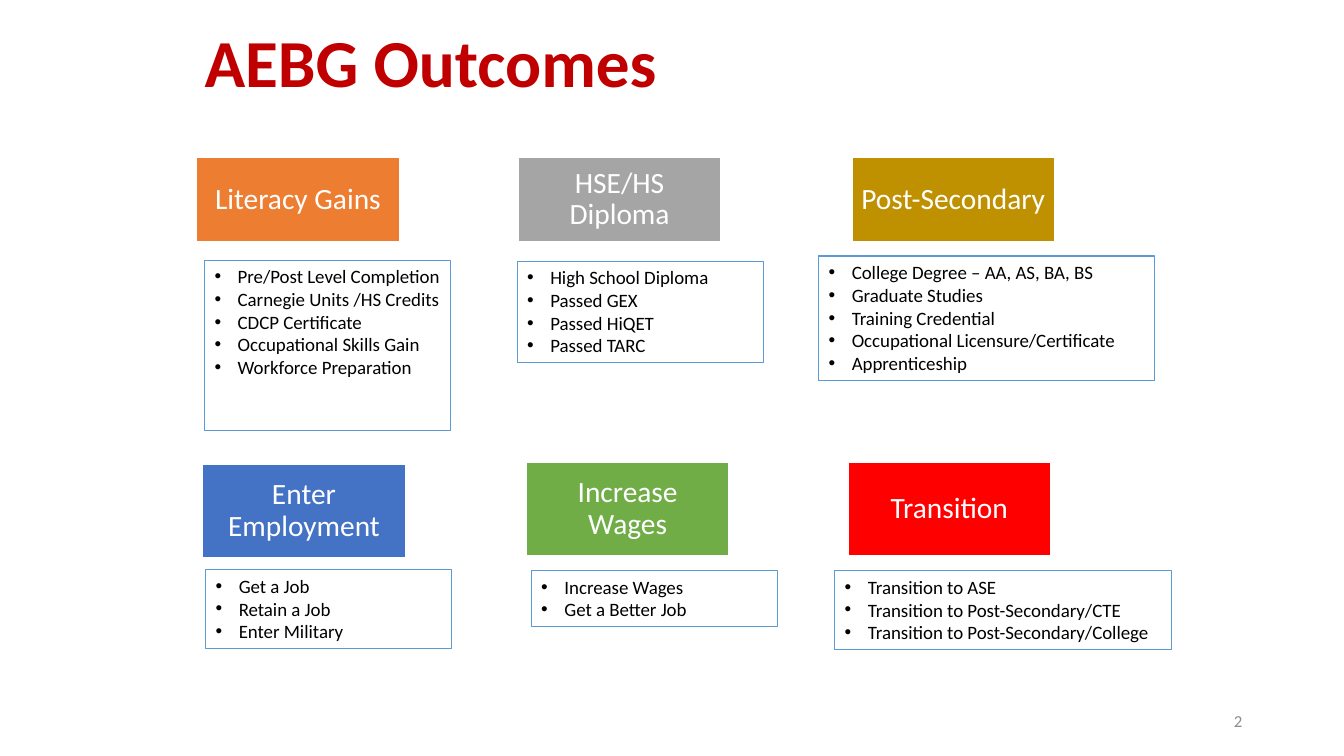
from dataclasses import dataclass

from lxml.etree import SubElement
from pptx import Presentation
from pptx.dml.color import RGBColor
from pptx.enum.shapes import MSO_SHAPE as Preset
from pptx.enum.text import MSO_ANCHOR as Anchor, PP_ALIGN as Align
from pptx.oxml.ns import qn
from pptx.util import Inches, Pt


@dataclass(frozen=True)
class Theme:
    font: str = "Calibri"
    title: str = "C00000"
    white: str = "FFFFFF"
    black: str = "000000"
    muted: str = "8C8C8C"
    border: str = "5B9BD5"
    orange: str = "ED7D31"
    gray: str = "A5A5A5"
    gold: str = "BF9000"
    blue: str = "4472C4"
    green: str = "70AD47"
    red: str = "FF0000"
    title_size: float = 48
    heading_size: float = 21
    list_size: float = 13.5
    number_size: float = 12


theme = Theme()


def write_text(shape, lines, *, size, color, bold=False, align=Align.LEFT,
               anchor=Anchor.TOP, spacing=1.0, inset=None, bullets=False):
    frame = shape.text_frame
    frame.word_wrap = True
    frame.vertical_anchor = anchor
    if inset is not None:
        frame.margin_left = frame.margin_right = Inches(inset)
        frame.margin_top = frame.margin_bottom = Inches(inset)
    frame.text = "\n".join(lines)
    for paragraph in frame.paragraphs:
        paragraph.alignment = align
        paragraph.line_spacing = spacing
        paragraph.font.name = theme.font
        paragraph.font.size = Pt(size)
        paragraph.font.bold = bold
        paragraph.font.color.rgb = RGBColor.from_string(color)
        if bullets:
            properties = paragraph._p.get_or_add_pPr()
            properties.set("marL", str(Inches(0.23)))
            properties.set("indent", str(-Inches(0.23)))
            bullet_font = SubElement(properties, qn("a:buFont"))
            bullet_font.set("typeface", "Arial")
            SubElement(properties, qn("a:buChar")).set("char", "•")
            default_run = properties.find(qn("a:defRPr"))
            properties.append(default_run)
        for run in paragraph.runs:
            run.font.name = theme.font
            run.font.size = Pt(size)
            run.font.bold = bold
            run.font.color.rgb = RGBColor.from_string(color)


def add_box(slide, bounds, *, fill=None, line, line_width):
    shape = slide.shapes.add_shape(Preset.RECTANGLE, *map(Inches, bounds))
    shape.shadow.inherit = False
    if fill:
        shape.fill.solid()
        shape.fill.fore_color.rgb = RGBColor.from_string(fill)
    else:
        shape.fill.background()
    shape.line.color.rgb = RGBColor.from_string(line)
    shape.line.width = Pt(line_width)
    return shape


presentation = Presentation()
presentation.slide_width = Inches(13.33)
presentation.slide_height = Inches(7.5)
slide = presentation.slides.add_slide(presentation.slide_layouts[6])

title = slide.shapes.add_textbox(Inches(1.93), Inches(0.38), Inches(8.62), Inches(0.55))
write_text(title, ["AEBG Outcomes"], size=theme.title_size, color=theme.title,
           bold=True, anchor=Anchor.MIDDLE, spacing=0.9)

outcomes = [
    ("Literacy Gains", theme.orange, (1.95, 1.56, 2.01, 0.84), (2.03, 2.58, 2.44, 1.69),
     ["Pre/Post Level Completion", "Carnegie Units /HS Credits", "CDCP Certificate",
      "Occupational Skills Gain", "Workforce Preparation"]),
    ("HSE/HS Diploma", theme.gray, (5.14, 1.56, 2.01, 0.84), (5.13, 2.59, 2.44, 1.01),
     ["High School Diploma", "Passed GEX", "Passed HiQET", "Passed TARC"]),
    ("Post-Secondary", theme.gold, (8.45, 1.56, 2.01, 0.84), (8.12, 2.54, 3.33, 1.24),
     ["College Degree – AA, AS, BA, BS", "Graduate Studies", "Training Credential",
      "Occupational Licensure/Certificate", "Apprenticeship"]),
    ("Enter Employment", theme.blue, (2.01, 4.61, 2.01, 0.92), (2.04, 5.65, 2.44, 0.78),
     ["Get a Job", "Retain a Job", "Enter Military"]),
    ("Increase Wages", theme.green, (5.22, 4.59, 2.01, 0.92), (5.27, 5.66, 2.44, 0.56),
     ["Increase Wages", "Get a Better Job"]),
    ("Transition", theme.red, (8.41, 4.59, 2.01, 0.92), (8.28, 5.66, 3.34, 0.78),
     ["Transition to ASE", "Transition to Post-Secondary/CTE",
      "Transition to Post-Secondary/College"]),
]

for heading, color, heading_bounds, list_bounds, measures in outcomes:
    heading_box = add_box(slide, heading_bounds, fill=color, line=theme.white, line_width=1)
    write_text(heading_box, [heading], size=theme.heading_size, color=theme.white,
               align=Align.CENTER, anchor=Anchor.MIDDLE, spacing=0.9, inset=0.09)
    list_box = add_box(slide, list_bounds, line=theme.border, line_width=0.75)
    write_text(list_box, measures, size=theme.list_size, color=theme.black, bullets=True)

slide_number = slide.shapes.add_textbox(Inches(9.42), Inches(6.95), Inches(3), Inches(0.4))
write_text(slide_number, ["2"], size=theme.number_size, color=theme.muted,
           align=Align.RIGHT, anchor=Anchor.MIDDLE)

presentation.save("out.pptx")
